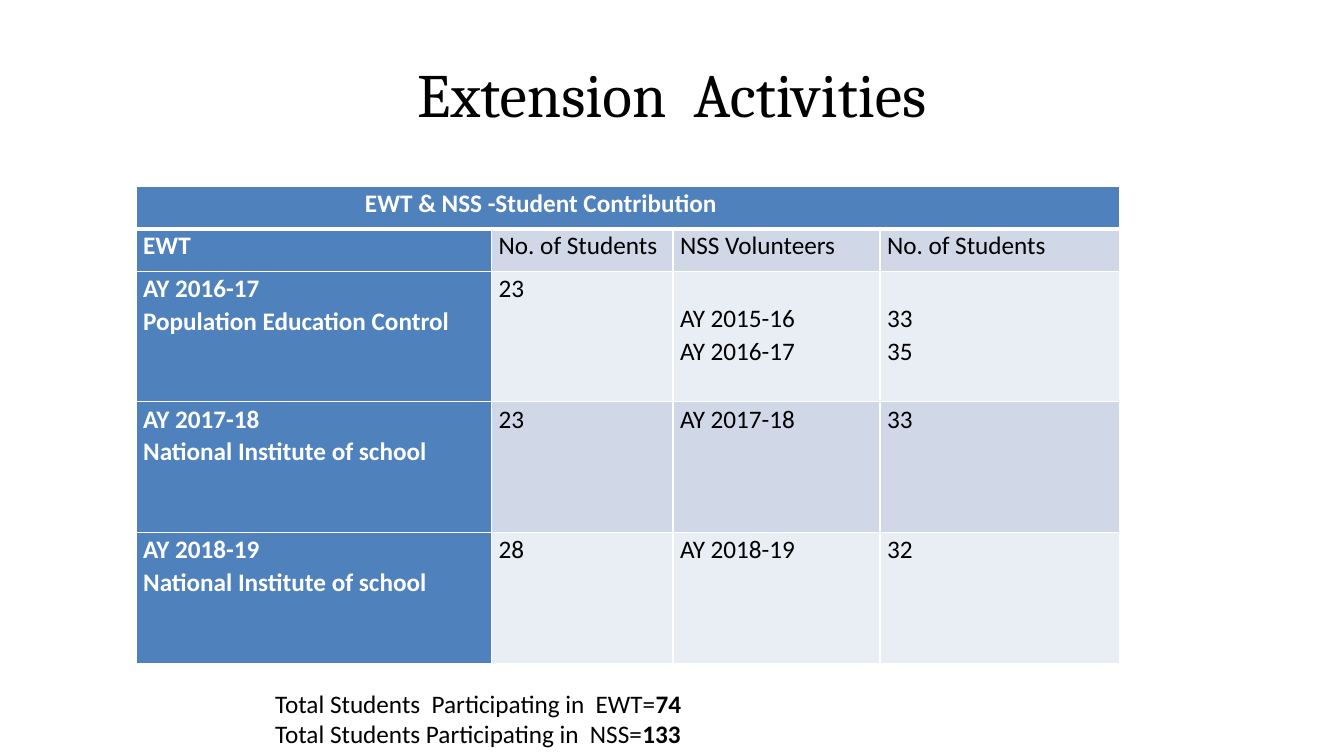
from lxml import etree
from pptx import Presentation, util as u
from pptx.dml.color import RGBColor
from pptx.enum import text
from pptx.oxml import ns

WHITE = RGBColor(0xFF, 0xFF, 0xFF)
BLACK = RGBColor(0, 0, 0)
BLUE = RGBColor(0x4F, 0x81, 0xBD)
DARK_BAND = RGBColor(0xD0, 0xD8, 0xE8)
LIGHT_BAND = RGBColor(0xE9, 0xED, 0xF4)

SLIDE_WIDTH, SLIDE_HEIGHT = u.Inches(13.33), u.Inches(7.5)
COLUMN_SHARES = [26.45, 13.5, 15.4, 15.4]
ROW_SHARES = [5.6, 5.6, 17.3, 17.3, 17.3]
BODY_FONT = {"name": "Calibri", "size": u.Pt(18)}
CELL_MARGINS = {"margin_left": u.Inches(0.07), "margin_right": u.Inches(0.07),
                "margin_top": 0, "margin_bottom": 0}
HEADING_MARGINS = {"margin_left": u.Inches(2.27)}
LOWERED_MARGINS = {"margin_top": u.Inches(0.3)}

HEADING = "EWT & NSS -Student Contribution"
CONTRIBUTIONS = [
    ["EWT", "No. of Students", "NSS Volunteers", "No. of Students"],
    ["AY 2016-17\nPopulation Education Control", "23",
     "AY 2015-16\nAY 2016-17", "33\n35"],
    ["AY 2017-18\nNational Institute of school", "23", "AY 2017-18", "33"],
    ["AY 2018-19\nNational Institute of school", "28", "AY 2018-19", "32"],
]
TOTALS = [("Total Students  Participating in  EWT=", "74"),
          ("Total Students Participating in  NSS=", "133")]


def across(share):
    """Turn a percentage of the slide's width into a length."""
    return round(SLIDE_WIDTH * share / 100)


def down(share):
    """Turn a percentage of the slide's height into a length."""
    return round(SLIDE_HEIGHT * share / 100)


def area(left, top, width, height):
    """Turn four percentages of the slide into a position and a size."""
    return across(left), down(top), across(width), down(height)


def apply(target, values):
    """Set each named attribute of the target."""
    for name, value in values.items():
        setattr(target, name, value)


def style_font(font, color, values):
    """Colour a font and set its other values."""
    apply(font, values)
    font.color.rgb = color


def add_title(slide, wording):
    """Fill and place the title placeholder."""
    title = slide.shapes.title
    places = ("left", "top", "width", "height")
    apply(title, dict(zip(places, area(5, 4, 90, 16.67))))
    title.text_frame.text = wording
    title.text_frame.vertical_anchor = text.MSO_ANCHOR.MIDDLE
    heading = title.text_frame.paragraphs[0]
    heading.alignment = text.PP_ALIGN.CENTER
    style_font(heading.runs[0].font, BLACK, {"name": "Cambria", "size": u.Pt(44)})


def add_borders(cell, widths):
    """Draw white lines on the sides of a cell."""
    properties = cell._tc.get_or_add_tcPr()
    for side in ("L", "R", "T", "B"):
        line = etree.SubElement(properties, ns.qn(f"a:ln{side}"),
                                w=str(u.Pt(widths.get(side, 1))))
        fill = etree.SubElement(line, ns.qn("a:solidFill"))
        etree.SubElement(fill, ns.qn("a:srgbClr"), val=str(WHITE))


def fill_cell(cell, wording, fill, emphasis, margins, widths):
    """Write a cell and give it its fill, margins and borders."""
    apply(cell, {**CELL_MARGINS, **margins})
    add_borders(cell, widths)
    cell.fill.solid()
    cell.fill.fore_color.rgb = fill
    cell.text = wording
    for paragraph in cell.text_frame.paragraphs:
        paragraph.line_spacing = 1.07
        style_font(paragraph.font, WHITE if emphasis else BLACK, BODY_FONT)
        for run in paragraph.runs:
            style_font(run.font, WHITE if emphasis else BLACK,
                       {**BODY_FONT, "bold": emphasis})


def add_contributions(slide):
    """Add the table of student contributions."""
    place = area(10.13, 24.67, sum(COLUMN_SHARES), sum(ROW_SHARES))
    table = slide.shapes.add_table(len(ROW_SHARES), len(COLUMN_SHARES), *place).table
    for column, share in zip(table.columns, COLUMN_SHARES):
        column.width = across(share)
    for row, share in zip(table.rows, ROW_SHARES):
        row.height = down(share)
    table.cell(0, 0).merge(table.cell(0, len(COLUMN_SHARES) - 1))
    fill_cell(table.cell(0, 0), HEADING, BLUE, True, HEADING_MARGINS, {"B": 3})
    for r, record in enumerate(CONTRIBUTIONS, 1):
        band = DARK_BAND if r % 2 else LIGHT_BAND
        for c, wording in enumerate(record):
            is_label = c == 0
            margins = LOWERED_MARGINS if r == 2 and c >= 2 else {}
            fill_cell(table.cell(r, c), wording, BLUE if is_label else band,
                      is_label, margins, {"T": 3} if r == 1 else {})


def add_totals(slide):
    """Add the lines of totals with bold figures."""
    frame = slide.shapes.add_textbox(*area(19.73, 90.4, 45.69, 9.47)).text_frame
    apply(frame, {"word_wrap": True,
                  "auto_size": text.MSO_AUTO_SIZE.SHAPE_TO_FIT_TEXT})
    for i, (label, figure) in enumerate(TOTALS):
        line = frame.add_paragraph() if i else frame.paragraphs[0]
        for wording, bold in ((label, False), (figure, True)):
            run = line.add_run()
            run.text = wording
            style_font(run.font, BLACK, {**BODY_FONT, "bold": bold})


def main():
    """Build the slide and save it."""
    deck = Presentation()
    apply(deck, {"slide_width": SLIDE_WIDTH, "slide_height": SLIDE_HEIGHT})
    slide = deck.slides.add_slide(deck.slide_layouts.get_by_name("Title Only"))
    add_title(slide, "Extension  Activities")
    add_contributions(slide)
    add_totals(slide)
    deck.save("out.pptx")


if __name__ == "__main__":
    main()
